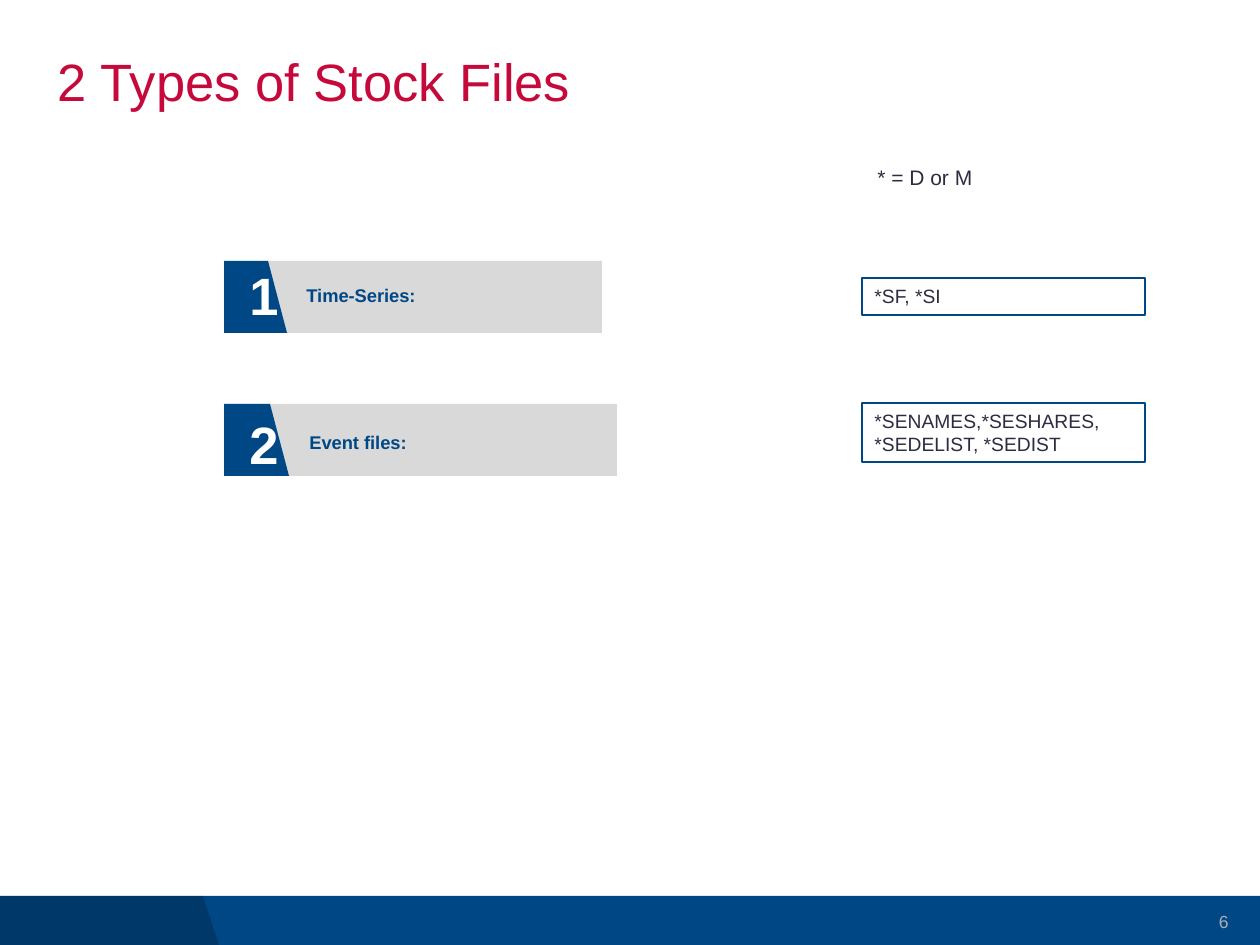
from lxml import etree
from pptx import Presentation
from pptx import util as u
from pptx.dml.color import RGBColor
from pptx.enum import shapes, text
from pptx.oxml.ns import qn

EMU_PER_PX = 914400 / 126
WIDTH, HEIGHT = 1260, 945
FOOTER_TOP = 896
BLUE, GREY, RED, INK, WHITE = "004785", "D9D9D9", "C5093B", "2D2C41", "FFFFFF"
PALE = "AFAFAF"

TITLE = "2 Types of Stock Files"
LEGEND = "* = D or M"
PAGE_NUMBER = "6"
BANNER_LEFT, BANNER_HEIGHT, SLOPE_WIDTH = 224, 72, 19
FILES_LEFT, FILES_WIDTH = 862, 283
FILE_TYPES = [
    dict(number="1", label="Time-Series:", files="*SF, *SI", top=261, width=378,
         tab=44, number_top=257, label_left=294, label_top=278,
         files_top=278, files_height=37),
    dict(number="2", label="Event files:", files="*SENAMES,*SESHARES,\v*SEDELIST, *SEDIST",
         top=404, width=393, tab=46, number_top=406, label_left=297, label_top=425,
         files_top=403, files_height=59),
]


def px(value):
    return u.Emu(round(value * EMU_PER_PX))


def rgb(value):
    return RGBColor.from_string(value)


def place(shape, left, top, width, height):
    shape.left, shape.top = px(left), px(top)
    shape.width, shape.height = px(width), px(height)


def write(shape, content, size, color, bold=False, align=text.PP_ALIGN.LEFT,
          anchor=text.MSO_ANCHOR.TOP, spacing=None, side_margin=0.1):
    frame = shape.text_frame
    frame.word_wrap = True
    frame.auto_size = text.MSO_AUTO_SIZE.NONE
    frame.vertical_anchor = anchor
    frame.margin_left = frame.margin_right = u.Inches(side_margin)
    frame.margin_top = frame.margin_bottom = u.Inches(0.05)
    frame.text = content
    paragraph = frame.paragraphs[0]
    paragraph.alignment = align
    if spacing:
        paragraph.line_spacing = spacing
    for run in paragraph.runs:
        run.font.name, run.font.size, run.font.bold = "Arial", u.Pt(size), bold
        run.font.color.rgb = rgb(color)


def add_text(slide, box, content, **style):
    shape = slide.shapes.add_textbox(*map(px, box))
    write(shape, content, **style)


def paint(shape, fill=None, line=None):
    shape.shadow.inherit = False
    if fill:
        shape.fill.solid()
        shape.fill.fore_color.rgb = rgb(fill)
    else:
        shape.fill.background()
    if line:
        shape.line.color.rgb = rgb(line)
        shape.line.width = u.Pt(0.75)
    else:
        shape.line.fill.background()


def add_block(slide, box, kind=shapes.MSO_SHAPE.RECTANGLE, **colors):
    shape = slide.shapes.add_shape(kind, *map(px, box))
    paint(shape, **colors)
    return shape


def add_footer(slide):
    height = HEIGHT - FOOTER_TOP
    add_block(slide, (0, FOOTER_TOP, WIDTH, height), fill=BLUE)
    builder = slide.shapes.build_freeform(0, FOOTER_TOP, scale=EMU_PER_PX)
    builder.add_line_segments([(203, FOOTER_TOP), (219, HEIGHT), (0, HEIGHT)])
    shade = builder.convert_to_shape()
    paint(shade, fill="000000")
    color = shade.fill._xPr.find(f"{qn('a:solidFill')}/{qn('a:srgbClr')}")
    etree.SubElement(color, qn("a:alpha"), val="20000")
    add_text(slide, (815, 897, 426, 50), PAGE_NUMBER, size=10, color=PALE,
             align=text.PP_ALIGN.RIGHT, anchor=text.MSO_ANCHOR.MIDDLE)


def add_file_type(slide, item):
    top, tab = item["top"], item["tab"]
    add_block(slide, (BANNER_LEFT, top, item["width"], BANNER_HEIGHT), fill=GREY)
    add_block(slide, (BANNER_LEFT, top, tab, BANNER_HEIGHT), fill=BLUE)
    slope = add_block(slide, (BANNER_LEFT + tab, top, SLOPE_WIDTH, BANNER_HEIGHT),
                      kind=shapes.MSO_SHAPE.ISOSCELES_TRIANGLE, fill=BLUE)
    slope.adjustments[0] = 0
    add_text(slide, (237, item["number_top"], 35, 77), item["number"],
             size=30, color=WHITE, bold=True)
    add_text(slide, (item["label_left"], item["label_top"], 236, 36), item["label"],
             size=10.5, color=BLUE, bold=True)
    files = add_block(slide, (FILES_LEFT, item["files_top"], FILES_WIDTH,
                              item["files_height"]), line=BLUE)
    write(files, item["files"], size=11, color=INK)


def main():
    presentation = Presentation()
    presentation.slide_width, presentation.slide_height = px(WIDTH), px(HEIGHT)
    slide = presentation.slides.add_slide(presentation.slide_layouts[5])
    add_footer(slide)
    title = slide.shapes.title
    place(title, 58, 50, 1086, 71)
    write(title, TITLE, size=30, color=RED, spacing=0.9, side_margin=0)
    for item in FILE_TYPES:
        add_file_type(slide, item)
    add_text(slide, (865, 158, 280, 38), LEGEND, size=12, color=INK)
    presentation.save("out.pptx")


if __name__ == "__main__":
    main()
